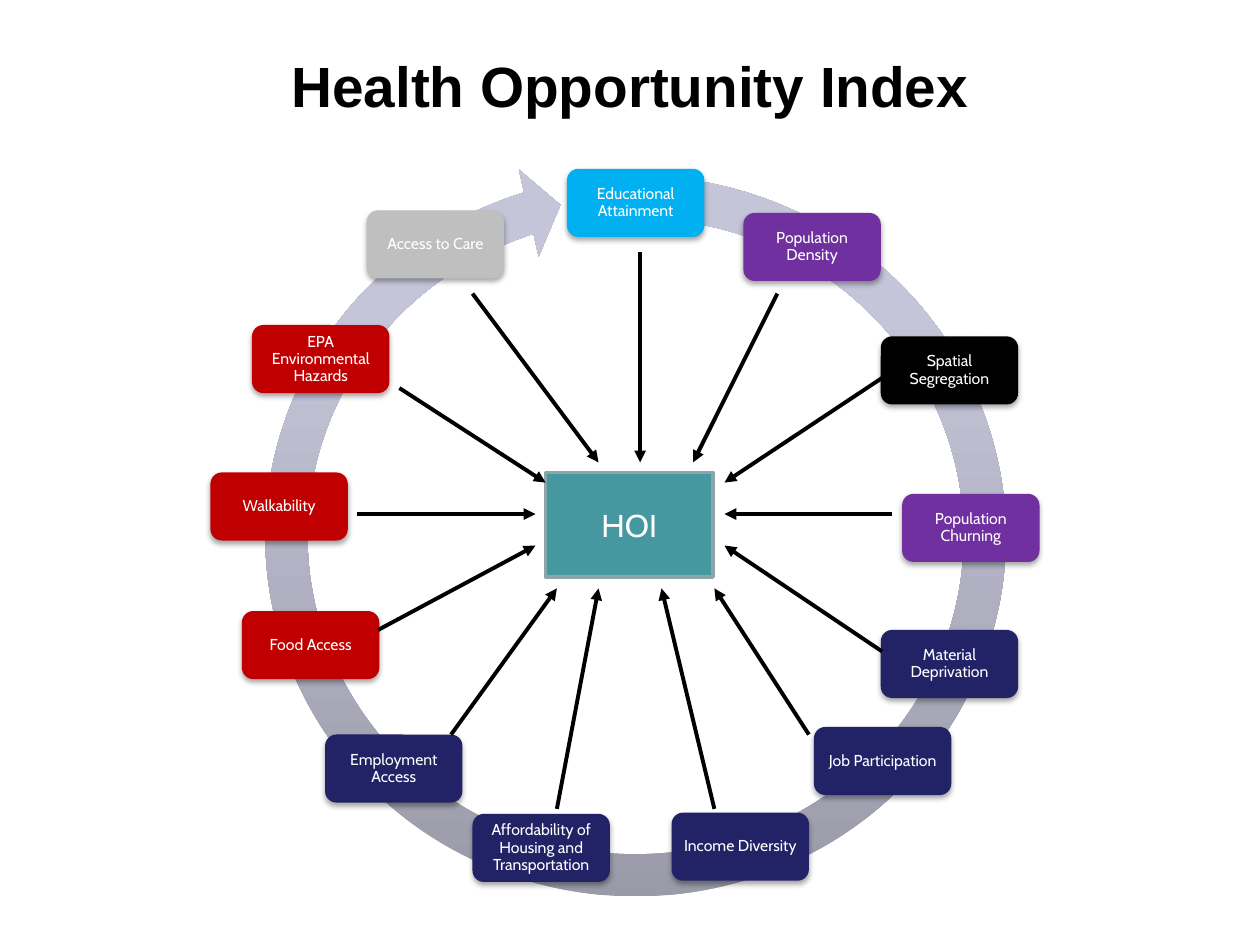
import pptx
import pptx.util
import pptx.dml.color
import pptx.enum.shapes
import pptx.enum.text
import pptx.oxml
import pptx.oxml.ns
from lxml import etree

Inches, Pt = pptx.util.Inches, pptx.util.Pt
RGB = pptx.dml.color.RGBColor
MSO = pptx.enum.shapes.MSO_SHAPE
ANCHOR = pptx.enum.text.MSO_ANCHOR
ALIGN = pptx.enum.text.PP_ALIGN
qn = pptx.oxml.ns.qn
NS = pptx.oxml.ns.nsdecls("a")

BLACK = RGB(0x00, 0x00, 0x00)
WHITE = RGB(0xFF, 0xFF, 0xFF)
SKY = RGB(0x00, 0xB0, 0xF0)
PURPLE = RGB(0x70, 0x30, 0xA0)
NAVY = RGB(0x22, 0x22, 0x67)
RED = RGB(0xC0, 0x00, 0x00)
GRAY = RGB(0xBF, 0xBF, 0xBF)
TEAL = RGB(0x45, 0x97, 0xA0)
TEAL_EDGE = RGB(0x8A, 0xA6, 0xA8)
RING_STOPS = [(0, "9898A7"), (80, "C5C5D9"), (100, "C6C6DA")]

TITLE = "Health Opportunity Index"
CARD_W, CARD_H = 1.09, 0.54

# Indicators, clockwise: label, colour, card left/top, arrow start, arrow end
INDICATORS = [
    ("Educational Attainment", SKY, (4.5, 1.34), (5.08, 2), (5.08, 3.67)),
    ("Population Density", PURPLE, (5.9, 1.69), (6.17, 2.33), (5.5, 3.67)),
    ("Spatial Segregation", BLACK, (6.99, 2.67), (7, 3), (5.75, 3.83)),
    ("Population Churning", PURPLE, (7.16, 3.92), (7.08, 4.08), (5.75, 4.08)),
    ("Material Deprivation", NAVY, (6.99, 5), (7, 5.17), (5.75, 4.33)),
    ("Job Participation", NAVY, (6.46, 5.77), (6.42, 5.83), (5.67, 4.67)),
    ("Income Diversity", NAVY, (5.33, 6.45), (5.67, 6.42), (5.25, 4.67)),
    ("Affordability of Housing and Transportation", NAVY, (3.75, 6.46), (4.42, 6.42), (4.75, 4.67)),
    ("Employment Access", NAVY, (2.58, 5.83), (3.58, 5.83), (4.42, 4.67)),
    ("Food Access", RED, (1.92, 4.85), (3, 5), (4.25, 4.33)),
    ("Walkability", RED, (1.67, 3.75), (2.83, 4.08), (4.25, 4.08)),
    ("EPA Environmental Hazards", RED, (2, 2.58), (3.17, 3.08), (4.33, 3.83)),
    ("Access to Care", GRAY, (2.91, 1.67), (3.75, 2.33), (4.75, 3.67)),
]


def add_shape(slide, kind, left, top, width, height, fill=None):
    sp = slide.shapes.add_shape(kind, Inches(left), Inches(top), Inches(width), Inches(height))
    sp.shadow.inherit = False
    sp.line.fill.background()
    if fill is not None:
        sp.fill.solid()
        sp.fill.fore_color.rgb = fill
    return sp


def set_text(sp, text, size, color, font="Cabin", bold=False, anchor=ANCHOR.MIDDLE):
    tf = sp.text_frame
    tf.word_wrap = True
    tf.vertical_anchor = anchor
    tf.text = text
    p = tf.paragraphs[0]
    p.alignment = ALIGN.CENTER
    f = p.runs[0].font
    f.name, f.size, f.bold = font, Pt(size), bold
    f.color.rgb = color
    return tf


def add_ring(slide):
    sp = add_shape(slide, MSO.CIRCULAR_ARROW, 1.92, 1.21, 6.25, 6.09)
    for i, value in enumerate([0.055, 3.307, 151.016, 166.209, 0.058]):
        sp.adjustments[i] = value
    stops = "".join(
        f'<a:gs pos="{pos * 1000}"><a:srgbClr val="{color}"/></a:gs>' for pos, color in RING_STOPS)
    geom = sp._element.spPr.find(qn("a:prstGeom"))
    geom.addnext(pptx.oxml.parse_xml(
        f'<a:gradFill {NS} rotWithShape="1"><a:gsLst>{stops}</a:gsLst>'
        '<a:lin ang="16200000" scaled="0"/></a:gradFill>'))


def add_card(slide, label, color, left, top):
    sp = add_shape(slide, MSO.ROUNDED_RECTANGLE, left, top, CARD_W, CARD_H, color)
    sp._element.spPr.find(qn("a:effectLst")).append(pptx.oxml.parse_xml(
        f'<a:outerShdw {NS} blurRad="{Pt(3.1)}" dist="{Pt(1.8)}" dir="5400000" rotWithShape="0">'
        '<a:srgbClr val="000000"><a:alpha val="35000"/></a:srgbClr></a:outerShdw>'))
    tf = set_text(sp, label, 9, WHITE)
    tf.margin_left = tf.margin_right = tf.margin_top = tf.margin_bottom = Inches(0.04)
    tf.paragraphs[0].line_spacing = 0.9


def add_arrow(slide, start, end):
    cn = slide.shapes.add_connector(
        pptx.enum.shapes.MSO_CONNECTOR.STRAIGHT, *[Inches(v) for v in start + end])
    cn.line.color.rgb = BLACK
    cn.line.width = Pt(2.25)
    etree.SubElement(cn.line._get_or_add_ln(), qn("a:tailEnd"), type="triangle")
    etree.SubElement(cn._element.spPr, qn("a:effectLst"))


def main():
    prs = pptx.Presentation()
    prs.slide_width, prs.slide_height = Inches(10), Inches(7.5)
    slide = prs.slides.add_slide(prs.slide_layouts[6])

    # Ring and indicator cards
    add_ring(slide)
    for label, color, corner, _, _ in INDICATORS:
        add_card(slide, label, color, *corner)

    # Central index box
    hub = add_shape(slide, MSO.RECTANGLE, 4.33, 3.75, 1.33, 0.83, TEAL)
    hub.line.color.rgb = TEAL_EDGE
    hub.line.width = Pt(2)
    set_text(hub, "HOI", 18, WHITE)

    # Arrows from the indicators to the index
    for _, _, _, start, end in INDICATORS:
        add_arrow(slide, start, end)

    # Title
    title = slide.shapes.add_textbox(Inches(0.5), Inches(0.3), Inches(9), Inches(1.25))
    tf = set_text(title, TITLE, 32.4, BLACK, "Arial", True, ANCHOR.TOP)
    tf.margin_top = Inches(0.1)

    prs.save("out.pptx")


if __name__ == "__main__":
    main()
